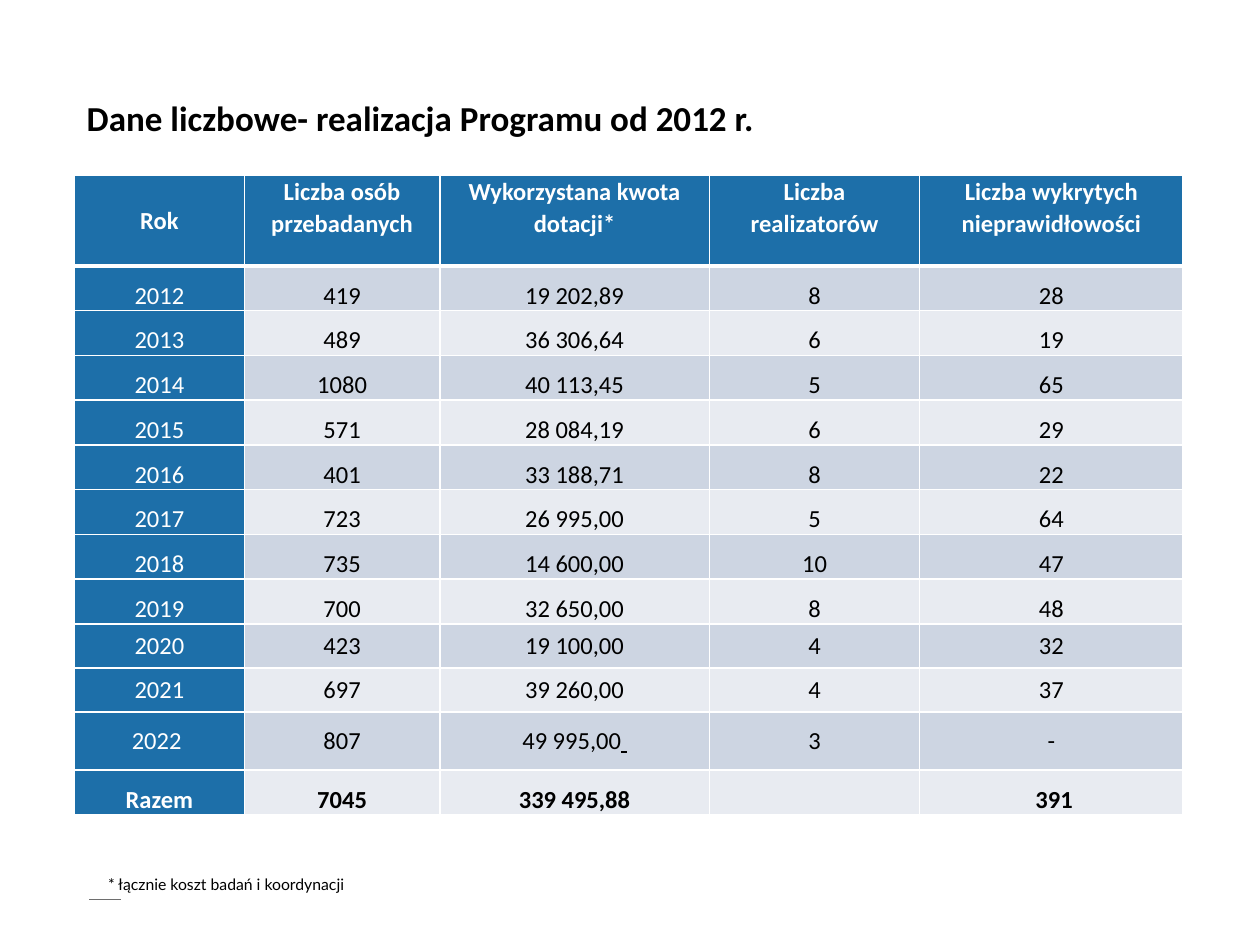
from lxml import etree
from pptx import Presentation
from pptx.dml.color import RGBColor
from pptx.enum.shapes import MSO_CONNECTOR as CONN
from pptx.enum.text import MSO_ANCHOR as ANCHOR, MSO_AUTO_SIZE as AUTO, PP_ALIGN as ALIGN
from pptx.oxml import parse_xml
from pptx.oxml.ns import nsdecls, qn
from pptx.util import Inches, Pt

BLUE, BAND, PALE = "1D6FA9", "CDD5E2", "E8EBF1"
WHITE, BLACK, GREY = "FFFFFF", "000000", "6E6E6E"

HEADER = ["Rok", "Liczba osób przebadanych", "Wykorzystana kwota dotacji*",
          "Liczba realizatorów", "Liczba wykrytych nieprawidłowości"]
YEARS = [
    ["2012", "419", "19 202,89", "8", "28"],
    ["2013", "489", "36 306,64", "6", "19"],
    ["2014", "1080", "40 113,45", "5", "65"],
    ["2015", "571", "28 084,19", "6", "29"],
    ["2016", "401", "33 188,71", "8", "22"],
    ["2017", "723", "26 995,00", "5", "64"],
    ["2018", "735", "14 600,00", "10", "47"],
    ["2019", "700", "32 650,00", "8", "48"],
    ["2020", "423", "19 100,00", "4", "32"],
    ["2021", "697", "39 260,00", "4", "37"],
    ["2022 ", "807", "49 995,00", "3", "-"],
]
TOTAL = ["Razem", "7045", "339 495,88", "", " 391"]
ROWS = [HEADER, *YEARS, TOTAL]
COL_WIDTHS = [1.35, 1.55, 2.14, 1.67, 2.09]
ROW_HEIGHTS = [0.72] + [0.35] * 10 + [0.46, 0.35]
MIDDLE_ROWS = (9, 10, 11)


def rgb(value):
    return RGBColor.from_string(value)


def apply(obj, formats):
    for name, value in formats.items():
        setattr(obj, name, value)


class Deck:
    def __init__(self, width, height):
        self.prs = Presentation()
        apply(self.prs, {"slide_width": Inches(width), "slide_height": Inches(height)})
        self.s = self.prs.slides.add_slide(self.prs.slide_layouts[6])

    def run(self, p, text, color, **font):
        r = p.add_run()
        r.text = text
        apply(r.font, font)
        r.font.color.rgb = rgb(color)

    def text(self, box, text, frame, align, **font):
        sp = self.s.shapes.add_textbox(*map(Inches, box))
        apply(sp.text_frame, frame)
        p = sp.text_frame.paragraphs[0]
        p.alignment = align
        self.run(p, text, BLACK, **font)

    def line(self, x1, y1, x2, y2, color, width):
        c = self.s.shapes.add_connector(CONN.STRAIGHT, *map(Inches, (x1, y1, x2, y2)))
        c.line.color.rgb = rgb(color)
        c.line.width = Pt(width)
        etree.SubElement(c._element.spPr, qn("a:effectLst"))

    def borders(self, cell, top, bottom):
        tcPr = cell._tc.get_or_add_tcPr()
        for side, width in zip("LRTB", (1, 1, top, bottom)):
            tcPr.append(parse_xml(
                f'<a:ln{side} {nsdecls("a")} w="{Pt(width)}"><a:solidFill>'
                f'<a:srgbClr val="{WHITE}"/></a:solidFill></a:ln{side}>'))

    def cell(self, cell, text, fill, color, anchor, spacing, bold):
        apply(cell, {"margin_left": Inches(0.07), "margin_right": Inches(0.07),
                     "margin_top": 0, "margin_bottom": 0, "vertical_anchor": anchor})
        cell.fill.solid()
        cell.fill.fore_color.rgb = rgb(fill)
        p = cell.text_frame.paragraphs[0]
        apply(p, {"alignment": ALIGN.CENTER, "line_spacing": spacing})
        p.font.size = Pt(14)
        if text:
            self.run(p, text, color, size=Pt(14), name="Calibri", bold=bold)

    def table(self, left, top, rows, widths, heights):
        box = map(Inches, (left, top, sum(widths), sum(heights)))
        t = self.s.shapes.add_table(len(rows), len(widths), *box).table
        for col, width in zip(t.columns, widths):
            col.width = Inches(width)
        for i, (row, height) in enumerate(zip(rows, heights)):
            t.rows[i].height = Inches(height)
            middle = i in MIDDLE_ROWS
            spacing = 1.07 if i == 0 else 1.0 if middle else 1.5
            for j, text in enumerate(row):
                head = i == 0 or j == 0
                fill = BLUE if head else BAND if i % 2 else PALE
                anchor = ANCHOR.MIDDLE if middle or i == j == 0 else ANCHOR.TOP
                self.borders(t.cell(i, j), 3 if i == 1 else 1, 3 if i == 0 else 1)
                self.cell(t.cell(i, j), text, fill, WHITE if head else BLACK,
                          anchor, spacing, i in (0, len(rows) - 1))
        return t


def main():
    deck = Deck(10, 7.5)

    # Footer rule
    deck.line(0.71, 7.14, 0.96, 7.14, GREY, 0.5)

    # Yearly figures, with the underlined space after the 2022 amount
    t = deck.table(0.59, 1.39, ROWS, COL_WIDTHS, ROW_HEIGHTS)
    deck.run(t.cell(11, 2).text_frame.paragraphs[0], " ", BLACK,
             size=Pt(14), name="Calibri", bold=False, underline=True)

    # Title and footnote
    deck.text((0.59, 0.7, 6.76, 0.45), "Dane liczbowe- realizacja Programu od 2012 r.",
              {"word_wrap": True, "vertical_anchor": ANCHOR.BOTTOM}, ALIGN.JUSTIFY,
              size=Pt(20), name="Calibri", bold=True)
    deck.text((0.76, 6.89, 2.13, 0.25), "* łącznie koszt badań i koordynacji",
              {"word_wrap": False, "auto_size": AUTO.SHAPE_TO_FIT_TEXT}, ALIGN.LEFT,
              size=Pt(9), name="Lato")

    deck.prs.save("out.pptx")


if __name__ == "__main__":
    main()
